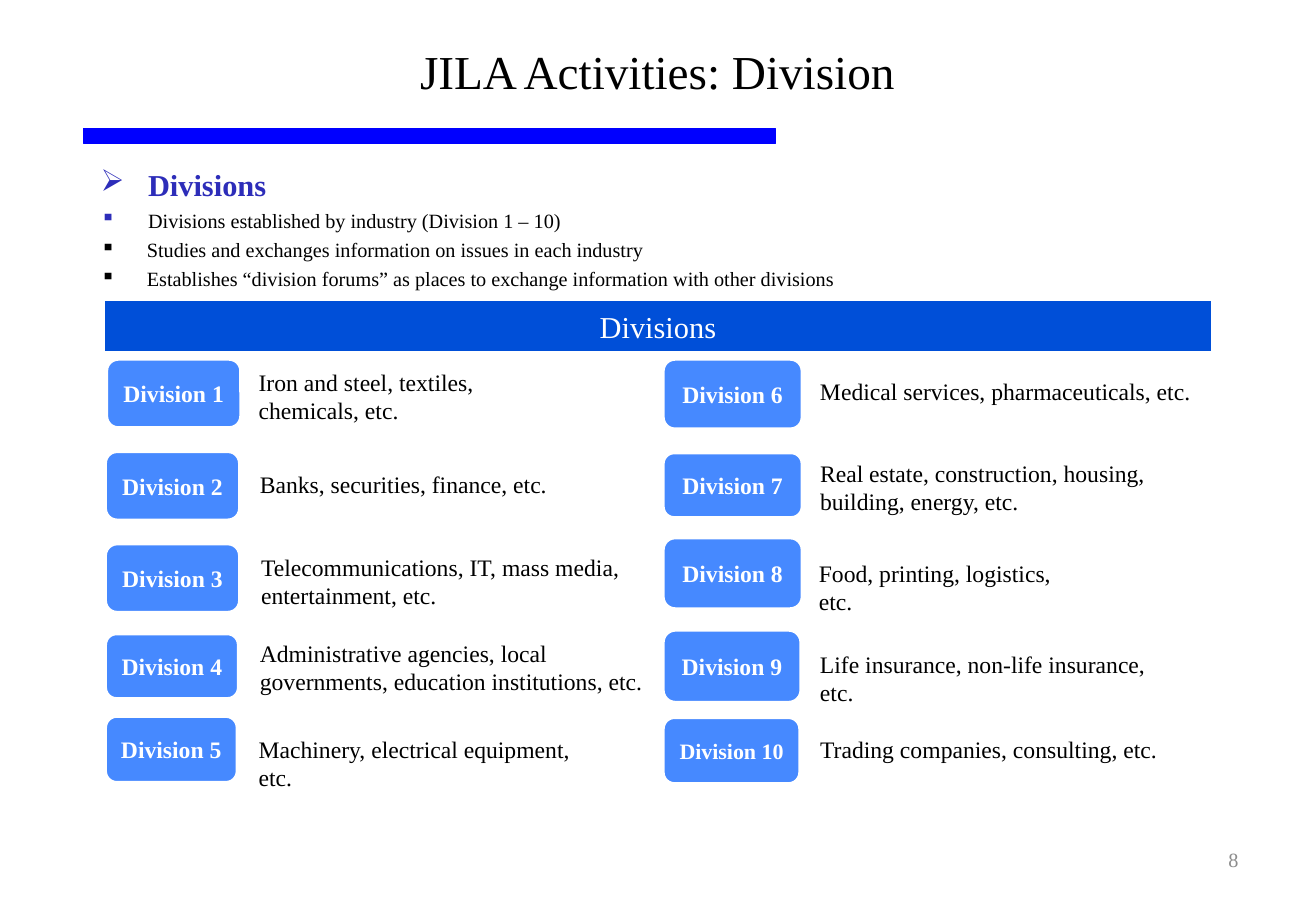
from pptx import Presentation
from pptx.dml.color import RGBColor
from pptx.enum.shapes import MSO_SHAPE
from pptx.enum.text import MSO_ANCHOR, PP_ALIGN
from pptx.oxml import parse_xml
from pptx.oxml.ns import nsdecls
from pptx.util import Pt

PX = 9144
FONT = "Times New Roman"
RECT, ROUND = MSO_SHAPE.RECTANGLE, MSO_SHAPE.ROUNDED_RECTANGLE
TOP, MID = MSO_ANCHOR.TOP, MSO_ANCHOR.MIDDLE
LEFT, CENTER, RIGHT = PP_ALIGN.LEFT, PP_ALIGN.CENTER, PP_ALIGN.RIGHT

deck = Presentation()
deck.slide_width, deck.slide_height = 1083 * PX, 750 * PX
slide = deck.slides.add_slide(deck.slide_layouts[6])


def color(code):
    return RGBColor.from_string(code)


def block(area, text, size, ink="000000", align=LEFT, anchor=TOP,
          kind=None, fill="FFFFFF", line="FFFFFF", width=1.5, bold=False):
    area = [n * PX for n in area]
    if kind is None:
        shape = slide.shapes.add_textbox(*area)
    else:
        shape = slide.shapes.add_shape(kind, *area)
        shape.shadow.inherit = False
        shape.fill.solid()
        shape.fill.fore_color.rgb = color(fill)
        shape.line.color.rgb = color(line)
        shape.line.width = Pt(width)
    frame = shape.text_frame
    frame.word_wrap = True
    frame.vertical_anchor = anchor
    if text:
        para = frame.paragraphs[0]
        para.alignment = align
        run = para.add_run()
        run.text = text
        run.font.name, run.font.size, run.font.bold = FONT, Pt(size), bold
        run.font.color.rgb = color(ink)
    return shape


block((69, 106, 569, 12), "", 12, kind=RECT, fill="0000FF", line="0000FF", width=0.75)
block((116, 26, 850, 65), "JILA Activities: Division", 28, align=CENTER, anchor=MID)

points = [
    ("Divisions", 18, "2D2DB9", "➢", "2D2DB9", 39),
    ("Divisions established by industry (Division 1 – 10)", 12, "000000", "▪", "2D2DB9", 39),
    ("Studies and exchanges information on issues in each industry",
     12, "000000", "▪", "000000", 38),
    ("Establishes “division forums” as places to exchange information with other divisions",
     12, "000000", "▪", "000000", 38),
]
body = block((73, 132, 971, 110), "", 12).text_frame
for i, (text, size, ink, mark, tint, indent) in enumerate(points):
    para = body.paragraphs[0] if i == 0 else body.add_paragraph()
    props = para._p.get_or_add_pPr()
    props.set("marL", str(indent * PX))
    props.set("indent", str(-indent * PX))
    props.append(parse_xml(
        f'<a:buClr {nsdecls("a")}><a:srgbClr val="{tint}"/></a:buClr>'))
    props.append(parse_xml(f'<a:buChar {nsdecls("a")} char="{mark}"/>'))
    if i:
        para.space_before = Pt(3)
    run = para.add_run()
    run.text = text
    run.font.name, run.font.size, run.font.bold = FONT, Pt(size), i == 0
    run.font.color.rgb = color(ink)

block((85, 247, 913, 43), "Divisions", 18, "FFFFFF", CENTER, MID, RECT, "004FD8")

groups = [
    ((88, 296, 110, 56), (203, 298, 265, 57), "Iron and steel, textiles, chemicals, etc."),
    ((87, 372, 110, 56), (204, 382, 264, 34), "Banks, securities, finance, etc."),
    ((87, 448, 110, 56), (205, 450, 331, 57),
     "Telecommunications, IT, mass media, entertainment, etc."),
    ((87, 522, 109, 53), (204, 521, 347, 57),
     "Administrative agencies, local governments, education institutions, etc."),
    ((87, 590, 108, 54), (203, 600, 307, 34), "Machinery, electrical equipment, etc."),
    ((546, 296, 114, 57), (665, 305, 333, 34), "Medical services, pharmaceuticals, etc."),
    ((546, 373, 114, 53), (665, 373, 335, 57),
     "Real estate, construction, housing, building, energy, etc."),
    ((546, 443, 114, 58), (664, 455, 240, 34), "Food, printing, logistics, etc."),
    ((546, 519, 113, 59), (665, 530, 317, 34), "Life insurance, non-life insurance, etc."),
    ((546, 591, 112, 54), (665, 600, 301, 34), "Trading companies, consulting, etc."),
]
for num, (badge, area, text) in enumerate(groups, 1):
    block(badge, f"Division {num}", 13 if num == 10 else 14, "FFFFFF",
          CENTER, MID, ROUND, "4689FF", bold=True)
    block(area, text, 14)

block((776, 680, 253, 55), "8", 12, "8C8C8C", RIGHT, MID)

deck.save("out.pptx")
